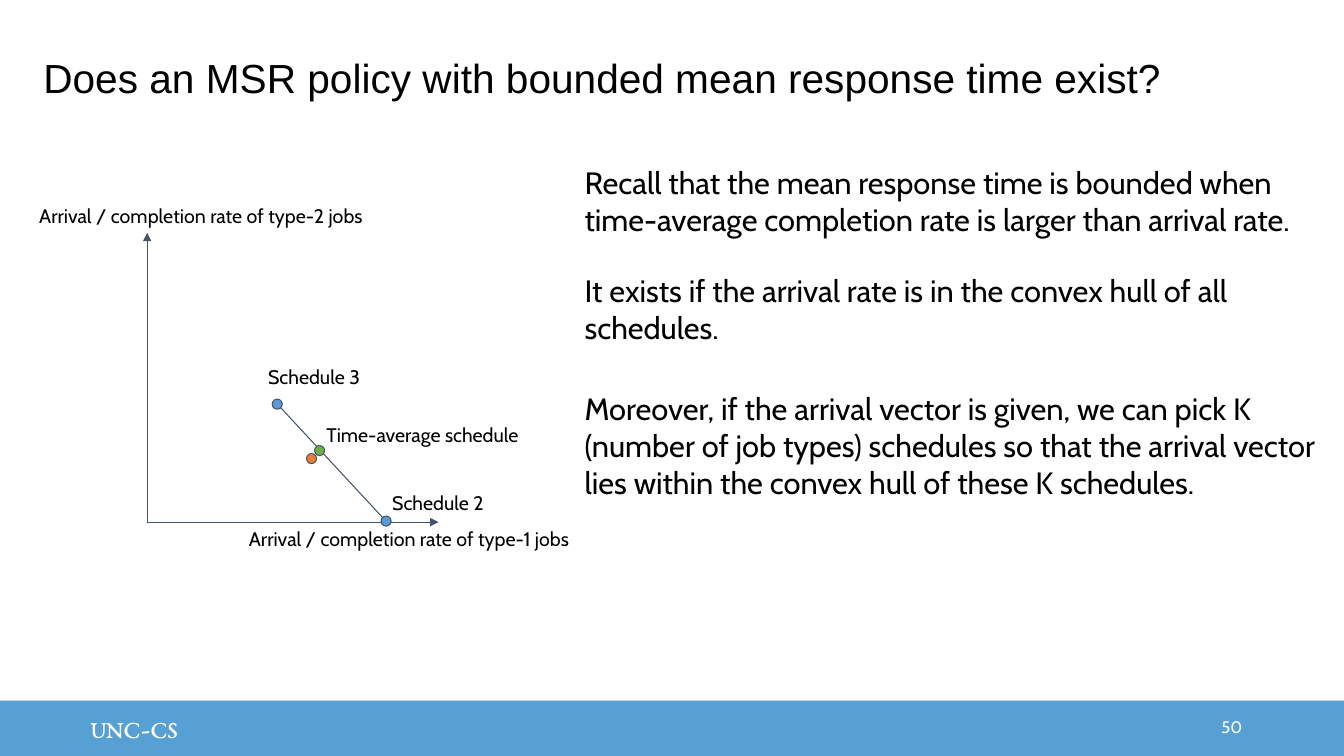
from pptx import Presentation
from pptx.dml.color import RGBColor
from pptx.enum.shapes import MSO_CONNECTOR, MSO_SHAPE
from pptx.enum.text import MSO_ANCHOR, PP_ALIGN
from pptx.oxml.ns import qn
from pptx.util import Inches, Pt
from lxml.etree import SubElement

BLACK = RGBColor(0x00, 0x00, 0x00)
WHITE = RGBColor(0xFF, 0xFF, 0xFF)
BAND = RGBColor(0x56, 0xA0, 0xD3)
SLATE = RGBColor(0x44, 0x54, 0x6A)
BLUE = RGBColor(0x5B, 0x9B, 0xD5)
ORANGE = RGBColor(0xED, 0x7D, 0x31)
GREEN = RGBColor(0x70, 0xAD, 0x47)

DOT = 0.1
LABEL_HEIGHT = 0.44
ORIGIN = (1.46, 5.18)


def place(s, left, top, width, height):
    s.left, s.top = Inches(left), Inches(top)
    s.width, s.height = Inches(width), Inches(height)


def write(s, text, size, font="Cabin", color=BLACK, anchor=MSO_ANCHOR.TOP,
          align=PP_ALIGN.LEFT, insets=(0.1, 0.1, 0.1, 0.1)):
    """Fill a shape with one paragraph; insets are left, top, right, bottom."""
    tf = s.text_frame
    tf.text = text
    tf.word_wrap = True
    tf.vertical_anchor = anchor
    (tf.margin_left, tf.margin_top,
     tf.margin_right, tf.margin_bottom) = map(Inches, insets)
    p = tf.paragraphs[0]
    p.alignment = align
    f = p.runs[0].font
    f.name, f.size = font, Pt(size)
    f.color.rgb = color
    return p


def add_text(slide, box, text, size, **style):
    s = slide.shapes.add_textbox(*map(Inches, box))
    write(s, text, size, **style)


def add_title(slide, text):
    s = slide.shapes.title
    place(s, 0.33, 0.07, 11.5, 1.45)
    p = write(s, text, 29, font="Arial", anchor=MSO_ANCHOR.MIDDLE)
    p.line_spacing = 0.9


def add_footer(slide, text, number):
    band = slide.shapes.add_shape(MSO_SHAPE.RECTANGLE, Inches(0), Inches(6.95),
                                  Inches(13.33), Inches(0.55))
    band.shadow.inherit = False
    band.fill.solid()
    band.fill.fore_color.rgb = BAND
    band.line.fill.background()
    write(band, text, 18, font="EB Garamond", color=WHITE,
          anchor=MSO_ANCHOR.MIDDLE, insets=(0.9, 0.05, 0.1, 0.05))
    add_text(slide, (10.92, 7.01, 1.5, 0.4), number, 12, color=WHITE,
             anchor=MSO_ANCHOR.MIDDLE, align=PP_ALIGN.RIGHT,
             insets=(0.1, 0.05, 0.1, 0.05))


def add_line(slide, start, end, arrow=False):
    s = slide.shapes.add_connector(MSO_CONNECTOR.STRAIGHT,
                                   *map(Inches, start + end))
    s.line.color.rgb = SLATE
    s.line.width = Pt(0.75)
    if arrow:
        SubElement(s.line._get_or_add_ln(), qn("a:tailEnd"), type="triangle")
    SubElement(s._element.spPr, qn("a:effectLst"))


def add_dot(slide, left, top, color):
    s = slide.shapes.add_shape(MSO_SHAPE.OVAL, Inches(left), Inches(top),
                               Inches(DOT), Inches(DOT))
    s.shadow.inherit = False
    s.fill.solid()
    s.fill.fore_color.rgb = color
    s.line.color.rgb = SLATE
    s.line.width = Pt(0.75)


def add_rate_diagram(slide):
    add_line(slide, ORIGIN, (1.46, 2.31), arrow=True)
    add_line(slide, ORIGIN, (4.35, 5.18), arrow=True)
    add_line(slide, (2.78, 4.04), (3.8, 5.14))
    for left, top, color in [(2.7, 3.96, BLUE), (3.78, 5.12, BLUE),
                             (3.04, 4.5, ORANGE), (3.12, 4.42, GREEN)]:
        add_dot(slide, left, top, color)
    for left, top, width, text in [
        (0.29, 1.92, 3.42, "Arrival / completion rate of type-2 jobs"),
        (2.37, 5.13, 3.68, "Arrival / completion rate of type-1 jobs"),
        (2.56, 3.52, 1.22, "Schedule 3"),
        (3.79, 4.77, 1.22, "Schedule 2"),
        (3.14, 4.1, 2.56, "Time-average schedule"),
    ]:
        add_text(slide, (left, top, width, LABEL_HEIGHT), text, 14)


def add_argument(slide):
    for top, height, text in [
        (1.52, 0.94, "Recall that the mean response time is bounded when "
                     "time-average completion rate is larger than arrival rate."),
        (2.6, 0.94, "It exists if the arrival rate is in the convex hull of "
                    "all schedules."),
        (3.77, 1.31, "Moreover, if the arrival vector is given, we can pick K "
                     "(number of job types) schedules so that the arrival "
                     "vector lies within the convex hull of these K schedules."),
    ]:
        add_text(slide, (5.7, top, 7.52, height), text, 22)


def main():
    prs = Presentation()
    prs.slide_width, prs.slide_height = Inches(13.33), Inches(7.5)
    slide = prs.slides.add_slide(prs.slide_layouts[5])
    add_title(slide, "Does an MSR policy with bounded mean response time exist?")
    add_footer(slide, "UNC-CS", "50")
    add_rate_diagram(slide)
    add_argument(slide)
    prs.save("out.pptx")


if __name__ == "__main__":
    main()
